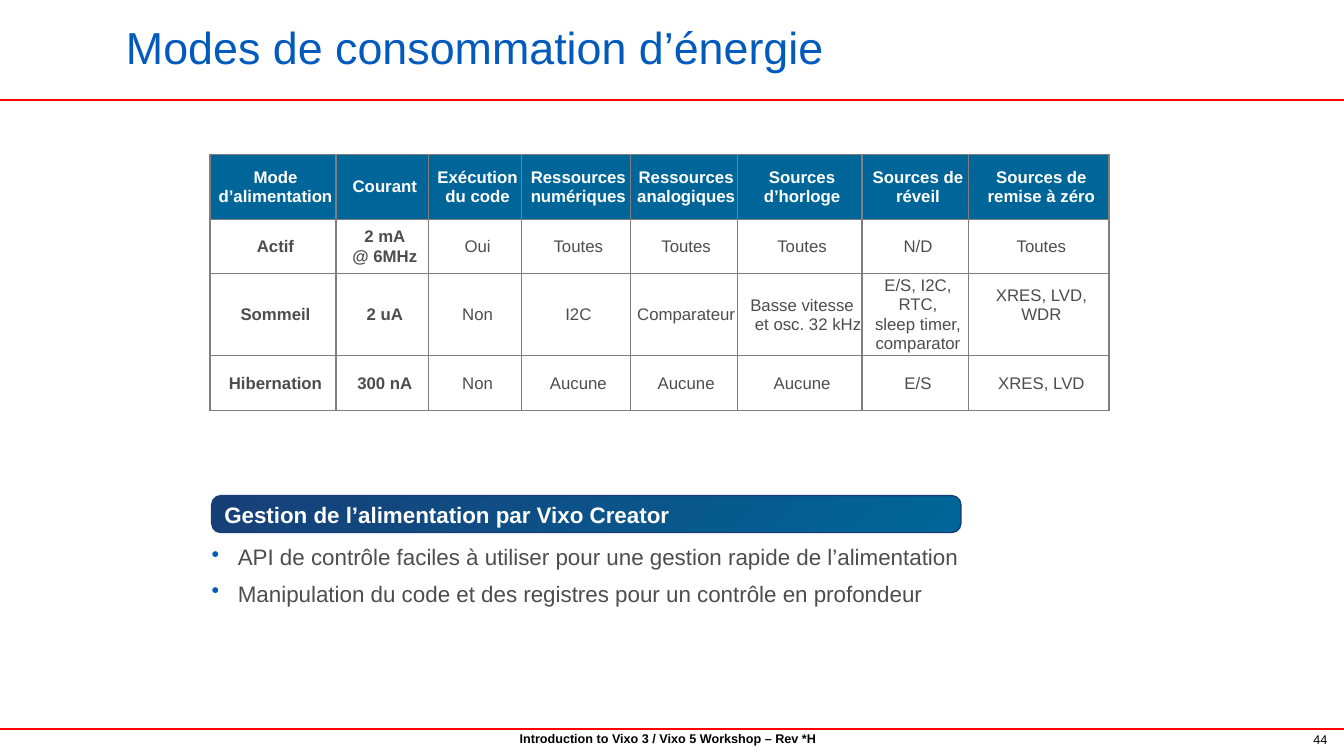
from lxml import etree
from pptx import Presentation
from pptx.dml.color import RGBColor
from pptx.enum.shapes import MSO_CONNECTOR, MSO_SHAPE
from pptx.enum.text import MSO_ANCHOR, PP_ALIGN
from pptx.oxml.ns import qn
from pptx.util import Inches, Pt

LEFT, CENTER, RIGHT = PP_ALIGN.LEFT, PP_ALIGN.CENTER, PP_ALIGN.RIGHT
TOP, MIDDLE = MSO_ANCHOR.TOP, MSO_ANCHOR.MIDDLE
ROUNDED, STRAIGHT = MSO_SHAPE.ROUNDED_RECTANGLE, MSO_CONNECTOR.STRAIGHT

BLACK = RGBColor(0x00, 0x00, 0x00)
WHITE = RGBColor(0xFF, 0xFF, 0xFF)
RED = RGBColor(0xFF, 0x00, 0x00)
BLUE = RGBColor(0x02, 0x5B, 0xBC)
NAVY = RGBColor(0x17, 0x3F, 0x77)
TEAL = RGBColor(0x00, 0x66, 0x99)
GREY = RGBColor(0x4D, 0x4D, 0x4D)
BORDER = RGBColor(0x7F, 0x7F, 0x7F)

COLUMNS, ROWS = 160, 90
MODE_COLUMNS = [15, 11.04, 11.04, 12.96, 12.72, 14.88, 12.72, 16.68]
MODE_ROWS = [7.7, 6.5, 9.2, 6.5]
MODES = [
    ["Mode d’alimentation", "Courant", "Exécution du code", "Ressources numériques",
     "Ressources analogiques", "Sources d’horloge", "Sources de réveil",
     "Sources de remise à zéro"],
    ["Actif", "2 mA\n@ 6MHz", "Oui", "Toutes", "Toutes", "Toutes", "N/D", "Toutes"],
    ["Sommeil", "2 uA", "Non", "I2C", "Comparateur", "Basse vitesse et osc. 32 kHz",
     "E/S, I2C, RTC,\nsleep timer, comparator", "XRES, LVD, WDR"],
    ["Hibernation", "300 nA", "Non", "Aucune", "Aucune", "Aucune", "E/S", "XRES, LVD"],
]


def write(tf, text, size=12, color=GREY, bold=False, align=LEFT, gap=0,
          line_spacing=None, indent=0, bullet=None):
    for i, line in enumerate(text.split("\n")):
        p = tf.add_paragraph() if i else tf.paragraphs[0]
        if indent:
            pPr = p._p.get_or_add_pPr()
            pPr.set("marL", str(Inches(indent)))
            pPr.set("indent", str(-Inches(indent)))
        if bullet:
            clr = etree.SubElement(pPr, qn("a:buClr"))
            etree.SubElement(clr, qn("a:srgbClr"), val=str(BLUE))
            etree.SubElement(pPr, qn("a:buChar"), char=bullet)
        p.alignment = align
        if i and gap:
            p.space_before = Pt(gap)
        if line_spacing:
            p.line_spacing = line_spacing
        r = p.add_run()
        r.text = line
        r.font.name = "Arial"
        r.font.size = Pt(size)
        r.font.bold = bold
        r.font.color.rgb = color


class Deck:
    def __init__(self):
        self.prs = Presentation()
        self.prs.slide_width, self.prs.slide_height = Inches(13.33), Inches(7.5)
        self.s = self.prs.slides.add_slide(self.prs.slide_layouts[5])

    def x(self, columns):
        return round(self.prs.slide_width * columns / COLUMNS)

    def y(self, rows):
        return round(self.prs.slide_height * rows / ROWS)

    def box(self, left, top, width, height):
        return self.x(left), self.y(top), self.x(width), self.y(height)

    def title(self, text, *box, **style):
        sp = self.s.shapes.title
        sp.left, sp.top, sp.width, sp.height = self.box(*box)
        sp.text_frame.vertical_anchor = MIDDLE
        write(sp.text_frame, text, **style)

    def rule(self, row):
        line = self.s.shapes.add_connector(
            STRAIGHT, 0, self.y(row), self.x(COLUMNS), self.y(row))
        line.line.color.rgb = RED
        line.line.width = Pt(1.25)
        etree.SubElement(line._element.spPr, qn("a:effectLst"))

    def text(self, text, *box, inset=None, **style):
        tf = self.s.shapes.add_textbox(*self.box(*box)).text_frame
        tf.word_wrap = True
        tf.vertical_anchor = TOP
        if inset is not None:
            tf.margin_left = tf.margin_right = inset
            tf.margin_top = tf.margin_bottom = inset
        write(tf, text, **style)

    def banner(self, text, *box, **style):
        sp = self.s.shapes.add_shape(ROUNDED, *self.box(*box))
        sp.adjustments[0] = 0.25
        sp.shadow.inherit = False
        sp.fill.gradient()
        sp.fill.gradient_angle = 315
        for stop, color in zip(sp.fill.gradient_stops, (NAVY, TEAL)):
            stop.color.rgb = color
        sp.line.color.rgb = NAVY
        sp.line.width = Pt(1)
        sp.text_frame.word_wrap = True
        sp.text_frame.vertical_anchor = MIDDLE
        write(sp.text_frame, text, **style)

    def table(self, rows, left, top, widths, heights):
        frame = self.s.shapes.add_table(
            len(rows), len(widths), *self.box(left, top, sum(widths), sum(heights)))
        tbl = frame.table
        tbl.horz_banding = False
        for column, width in zip(tbl.columns, widths):
            column.width = self.x(width)
        for row, height in zip(tbl.rows, heights):
            row.height = self.y(height)
        for i, row in enumerate(rows):
            for j, text in enumerate(row):
                self.cell(tbl.cell(i, j), text, header=i == 0, bold=i == 0 or j < 2)

    def cell(self, cell, text, header, bold):
        cell.vertical_anchor = MIDDLE
        cell.margin_left = Inches(0.05)
        cell.margin_right = cell.margin_top = 0
        cell.margin_bottom = Inches(0.2) if text.endswith("WDR") else 0
        tcPr = cell._tc.get_or_add_tcPr()
        for side in ("lnL", "lnR", "lnT", "lnB"):
            ln = etree.SubElement(tcPr, qn("a:" + side), w=str(Pt(1)))
            fill = etree.SubElement(ln, qn("a:solidFill"))
            etree.SubElement(fill, qn("a:srgbClr"), val=str(BORDER))
        if header:
            cell.fill.solid()
            cell.fill.fore_color.rgb = TEAL
        else:
            cell.fill.background()
        write(cell.text_frame, text, color=WHITE if header else GREY, bold=bold,
              align=CENTER, gap=1, indent=0.12 if text.startswith("Basse") else 0)


def main():
    deck = Deck()
    deck.text("Introduction to Vixo 3 / Vixo 5 Workshop – Rev *H", 38.5, 86.4, 82, 3,
              size=9, color=BLACK, bold=True, align=CENTER)
    deck.text("44", 146.5, 86.5, 12.7, 3, size=9, color=BLACK, align=RIGHT)
    for row in (11.9, 86.8):
        deck.rule(row)
    deck.title("Modes de consommation d’énergie", 13.8, 3.1, 116.4, 6.2,
               size=32, color=BLUE, line_spacing=0.79)
    deck.table(MODES, 25, 18.4, MODE_COLUMNS, MODE_ROWS)
    deck.banner("Gestion de l’alimentation par Vixo Creator", 25.2, 59, 89.2, 4.4,
                size=16, color=WHITE, bold=True)
    deck.text("API de contrôle faciles à utiliser pour une gestion rapide de l’alimentation\n"
              "Manipulation du code et des registres pour un contrôle en profondeur",
              25.2, 64.7, 89.2, 7.4, inset=0, size=16, gap=7, indent=0.26, bullet="•")
    deck.prs.save("out.pptx")


if __name__ == "__main__":
    main()
